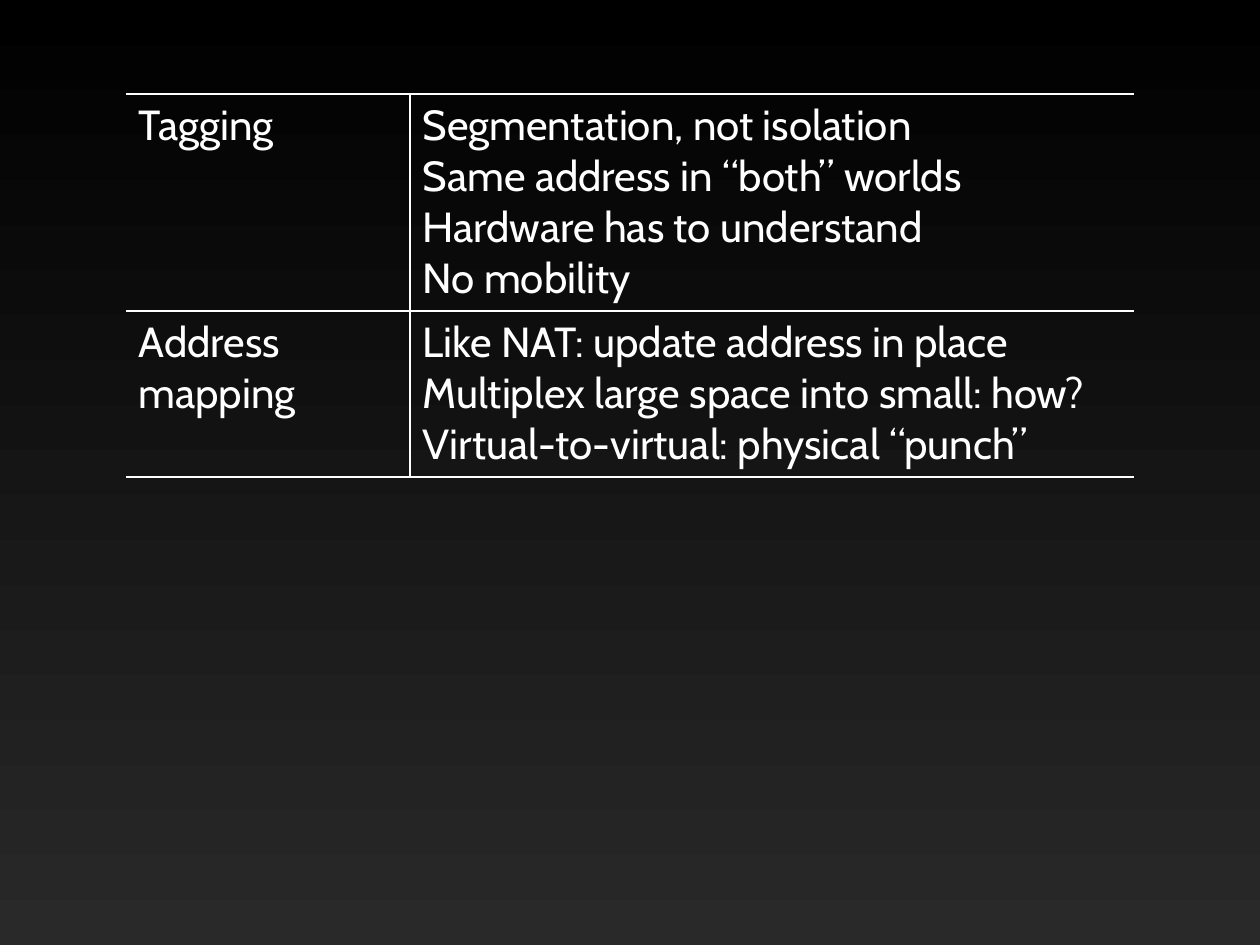
from lxml import etree
from pptx import Presentation
from pptx import util as u
from pptx.dml.color import RGBColor
from pptx.oxml.ns import qn

PX_PER_INCH = 126
COLORS = {"top": "000000", "bottom": "292929", "text": "FFFFFF", "rule": "FFFFFF"}
TEXT_FORMAT = {"name": "Cabin", "size": u.Pt(24)}
RULE_WIDTH = u.Pt(1)


def px(length):
    return u.Emu(round(length * u.Inches(1) / PX_PER_INCH))


def rgb(name):
    return RGBColor.from_string(COLORS[name])


class SlideBuilder:
    def __init__(self, slide):
        self.slide = slide

    def background(self, *names):
        fill = self.slide.background.fill
        fill.gradient()
        fill.gradient_angle = 270
        for stop, name in zip(fill.gradient_stops, names):
            stop.color.rgb = rgb(name)

    def table(self, left, top, widths, heights, rows):
        table = self.slide.shapes.add_table(
            len(rows), len(widths), px(left), px(top),
            px(sum(widths)), px(sum(heights))).table
        for flag in ("first_row", "horz_banding"):
            setattr(table, flag, False)
        for column, width in zip(table.columns, widths):
            column.width = px(width)
        for row, height in zip(table.rows, heights):
            row.height = px(height)
        for r, row in enumerate(rows):
            for c, lines in enumerate(row):
                cell = table.cell(r, c)
                self.cell_text(cell, lines)
                cell.fill.background()
                # Rules above and below every row, and between columns
                self.borders(cell, {"L": c > 0, "R": c < len(widths) - 1,
                                    "T": True, "B": True})

    def cell_text(self, cell, lines):
        frame = cell.text_frame
        for i, line in enumerate(lines):
            paragraph = frame.add_paragraph() if i else frame.paragraphs[0]
            paragraph.text = line
            for run in paragraph.runs:
                for name, value in TEXT_FORMAT.items():
                    setattr(run.font, name, value)
                run.font.color.rgb = rgb("text")

    def borders(self, cell, sides):
        properties = cell._tc.get_or_add_tcPr()
        for i, (side, visible) in enumerate(sides.items()):
            line = etree.Element(qn(f"a:ln{side}"), w=str(RULE_WIDTH))
            if visible:
                fill = etree.SubElement(line, qn("a:solidFill"))
                etree.SubElement(fill, qn("a:srgbClr"), val=COLORS["rule"])
            else:
                etree.SubElement(line, qn("a:noFill"))
            properties.insert(i, line)


def main():
    presentation = Presentation()
    presentation.slide_width = u.Inches(10)
    presentation.slide_height = u.Inches(7.5)
    slide = presentation.slides.add_slide(presentation.slide_layouts[6])
    builder = SlideBuilder(slide)

    # Dark backdrop
    builder.background("top", "bottom")

    # Approaches and their properties
    builder.table(126, 94, widths=[284, 724], heights=[217, 166], rows=[
        [["Tagging"],
         ["Segmentation, not isolation",
          "Same address in “both” worlds",
          "Hardware has to understand",
          "No mobility"]],
        [["Address\vmapping"],
         ["Like NAT: update address in place",
          "Multiplex large space into small: how?",
          "Virtual-to-virtual: physical “punch”"]],
    ])

    presentation.save("out.pptx")


if __name__ == "__main__":
    main()
